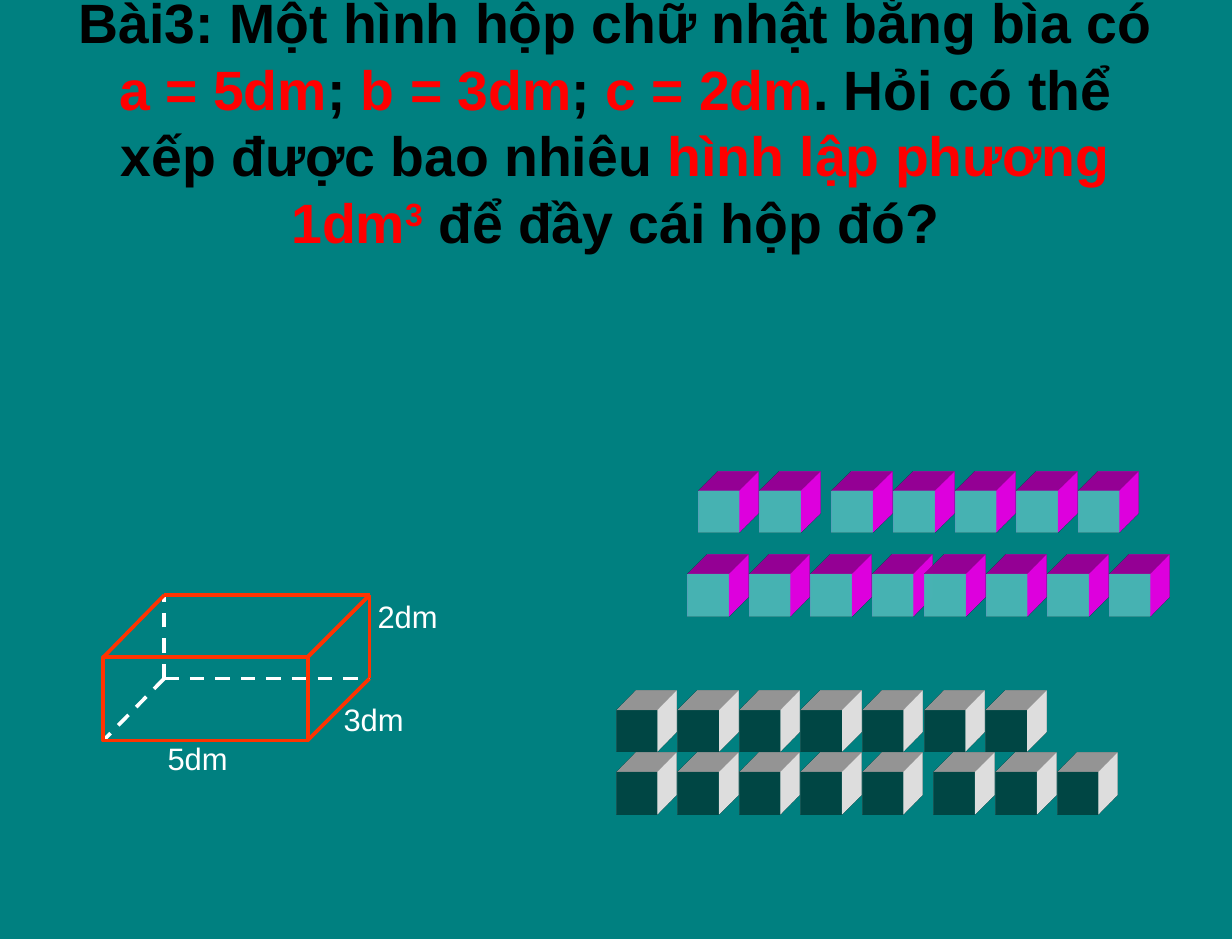
from pptx import Presentation
from pptx import util as u
from pptx.dml.color import RGBColor
from pptx.enum import dml, shapes, text
from pptx.oxml.ns import qn
from lxml import etree

HUES = {
    "back": "008080", "ink": "000000", "key": "FF0000", "white": "FFFFFF",
    "edge": "FF3300", "aqua": "66FFFF", "pink": "FF00FF", "pine": "006462",
}
SIDE, STEP = 0.35, 0.525


def hue(name):
    return RGBColor.from_string(HUES[name])


def write(para, words, size=19, color="white", bold=False, base=0):
    run = para.add_run()
    run.text = words
    font = run.font
    font.name, font.size, font.bold = "Arial", u.Pt(size), bold
    font.color.rgb = hue(color)
    if base:
        run._r.get_or_add_rPr().set("baseline", str(base * 1000))


def node(parent, tag, **attrs):
    return etree.SubElement(parent, qn(f"a:{tag}"), **attrs)


class Board:
    def __init__(self, deck):
        self.slide = deck.slides.add_slide(deck.slide_layouts[5])
        self.items = self.slide.shapes
        fill = self.slide.background.fill
        fill.solid()
        fill.fore_color.rgb = hue("back")

    def title(self, parts, x, y, w, h):
        box = self.items.title
        box.left, box.top, box.width, box.height = map(u.Inches, (x, y, w, h))
        frame = box.text_frame
        frame.word_wrap = True
        frame.auto_size = text.MSO_AUTO_SIZE.NONE
        frame.vertical_anchor = text.MSO_ANCHOR.MIDDLE
        frame.margin_left = frame.margin_right = u.Inches(0.11)
        frame.margin_top, frame.margin_bottom = u.Inches(0.05), u.Inches(0.61)
        para = frame.paragraphs[0]
        para.alignment = text.PP_ALIGN.CENTER
        for words, color, base in parts:
            write(para, words, size=34, color=color, bold=True, base=base)

    def label(self, words, x, y, w):
        box = self.items.add_textbox(*map(u.Inches, (x, y, w, 0.42)))
        box.text_frame.word_wrap = True
        write(box.text_frame.paragraphs[0], words)

    def line(self, start, end, color="edge", width=2.25, dash=False):
        line = self.items.add_connector(
            shapes.MSO_CONNECTOR.STRAIGHT, *map(u.Inches, (*start, *end)))
        line.line.color.rgb = hue(color)
        line.line.width = u.Pt(width)
        if dash:
            line.line.dash_style = dml.MSO_LINE.DASH
        node(line._element.spPr, "effectLst")

    def rect(self, x, y, w, h, fill=None, edge=None):
        box = self.items.add_shape(
            shapes.MSO_SHAPE.RECTANGLE, *map(u.Inches, (x, y, w, h)))
        box.shadow.inherit = False
        if fill:
            box.fill.solid()
            box.fill.fore_color.rgb = hue(fill)
        else:
            box.fill.background()
        if edge:
            box.line.color.rgb = hue(edge)
            box.line.width = u.Pt(2.25)
        else:
            box.line.fill.background()
        return box

    def cube(self, x, y, h, front, side):
        props = self.rect(x, y, SIDE, h, fill=front)._element.spPr
        scene = node(props, "scene3d")
        node(scene, "camera", prst="legacyObliqueTopRight")
        node(scene, "lightRig", rig="legacyFlat3", dir="b")
        solid = node(props, "sp3d", extrusionH="430200", prstMaterial="legacyMatte")
        for bevel in ("bevelT", "bevelB"):
            node(solid, bevel, w="13500", h="13500", prst="angle")
        node(node(solid, "extrusionClr"), "srgbClr", val=HUES[side])


def main():
    deck = Presentation()
    deck.slide_width, deck.slide_height = u.Inches(10.5), u.Inches(8)
    board = Board(deck)
    board.title([
        ("Bài3: Một hình hộp chữ nhật bằng bìa có ", "ink", 0),
        ("a = 5dm", "key", 0), ("; ", "ink", 0),
        ("b = 3dm", "key", 0), ("; ", "ink", 0),
        ("c = 2dm", "key", 0),
        (". Hỏi có thể xếp được bao nhiêu ", "ink", 0),
        ("hình lập phương 1dm", "key", 0), ("3", "key", 30),
        (" để đầy cái hộp đó?", "ink", 0),
    ], 0.52, 0.32, 9.45, 1.99)

    left, right, top, low = 0.88, 2.62, 5.6, 6.31
    far, end, roof, floor = 1.4, 3.15, 5.07, 5.78
    for spot in [(end, floor), (far, roof), (left, low)]:
        board.line((far, floor), spot, color="white", dash=True)
    board.rect(left, top, 1.75, low - top, edge="edge")
    rim = [(right, top), (end, roof), (end, floor), (right, low)]
    for start, stop in zip(rim, rim[1:]):
        board.line(start, stop)
    for spot in [(end, roof), (left, top)]:
        board.line((far, roof), spot)

    rows = [
        (4.18, 0.36, "aqua", "pink", [(5.95, 2), (7.09, 5)]),
        (4.89, 0.36, "aqua", "pink", [(5.86, 4), (7.88, 4)]),
        (6.05, 0.35, "pine", "white", [(5.25, 7)]),
        (6.58, 0.36, "pine", "white", [(5.25, 5), (7.96, 3)]),
    ]
    for y, h, front, side, runs in rows:
        for x, count in runs:
            for i in range(count):
                board.cube(x + i * STEP, y, h, front, side)

    board.line((left, top), (right, top))
    board.line((end, roof), (right, top))
    board.line((right, low), (right, top))
    board.line((left, low), (left, top), width=1.5)

    board.label("5dm", 1.33, 6.25, 0.83)
    board.label("3dm", 2.83, 5.92, 0.75)
    board.label("2dm", 3.12, 5.04, 0.83)
    deck.save("out.pptx")


if __name__ == "__main__":
    main()
